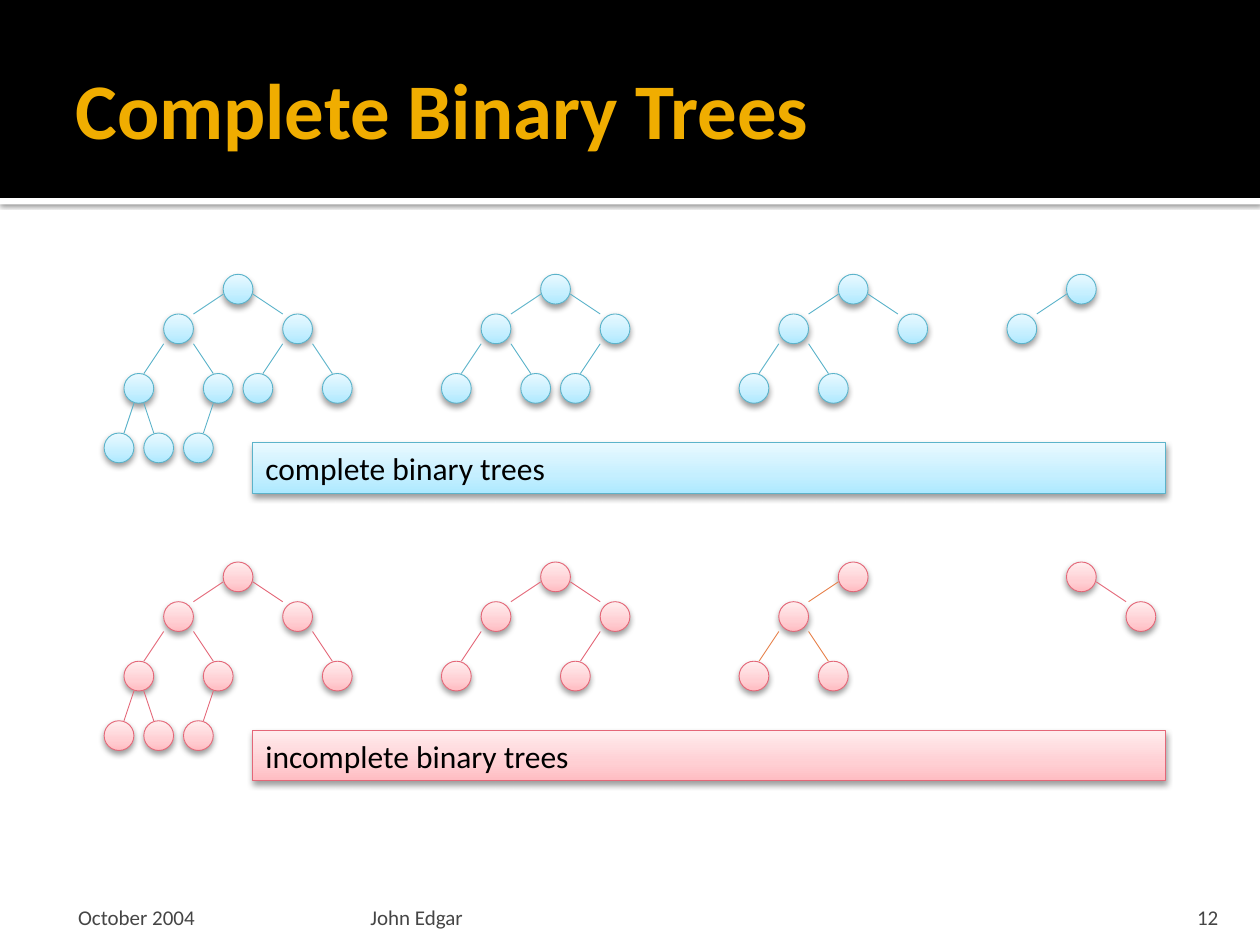
from pptx import Presentation, util as u
from pptx.dml.color import RGBColor
from pptx.enum import shapes, text
from pptx.oxml import parse_xml

NS = 'xmlns:a="http://schemas.openxmlformats.org/drawingml/2006/main"'
INK = {"black": "000000", "white": "FFFFFF", "gold": "F0AD00", "grey": "454545",
       "blue": "5BB3CA", "red": "E46778", "orange": "E7824C"}
FADE = {"blue": {0: "ADE9FF", 35: "C5EFFF", 100: "E9F9FF"},
        "red": {0: "FFBCC2", 35: "FFCFD3", 100: "FFEDEE"}}
TOPS = (0, 4, 10, 16)
REACH = (6, 4, 2)
EDGES = ((1.5, 2, 4.5), (1.5, 3, 3.5), (0.5, 3, 1.5))
SIZE = 3
ROOTS = (24, 56, 86, 109)
ROWS = (
    (27.65, "blue", "complete binary trees",
     (range(2, 11), range(2, 7), range(2, 6), (2,)), ("blue",) * 4),
    (56.65, "red", "incomplete binary trees",
     ((2, 3, 4, 5, 7, 8, 9, 10), (2, 3, 4, 6), (2, 4, 5), (3,)),
     ("red", "red", "orange", "red")),
)
FOOT = ((6.35, 29.6, "October 2004", 0.12, 0.05, "LEFT"),
        (36.7, 76.45, "John Edgar", 0.05, 0.05, "LEFT"),
        (113.9, 10.15, "12", 0.1, 0.1, "RIGHT"))


class Deck:
    """Draws styled elements on one slide, measured in a grid of 127 columns."""

    def __init__(self):
        self.prs = Presentation()
        self.prs.slide_width, self.prs.slide_height = u.Inches(10), u.Inches(7.5)
        self.page = self.prs.slides.add_slide(self.prs.slide_layouts[6])
        self.cell = self.prs.slide_width / 127
        self.font = "Calibri"

    def grid(self, *marks):
        return [round(mark * self.cell) for mark in marks]

    def color(self, name):
        return RGBColor.from_string(INK[name])

    def shadow(self, shape, alpha, blur, dist):
        shape.shadow.inherit = True
        shape._element.spPr.append(parse_xml(
            f'<a:effectLst {NS}><a:outerShdw blurRad="{u.Pt(blur)}" dist="{u.Pt(dist)}" '
            f'dir="5400000" rotWithShape="0"><a:srgbClr val="{INK["black"]}">'
            f'<a:alpha val="{alpha * 1000}"/></a:srgbClr></a:outerShdw></a:effectLst>'))

    def band(self, top, high, name):
        bar = self.page.shapes.add_shape(
            shapes.MSO_SHAPE.RECTANGLE, *self.grid(0, top, 127, high))
        bar.shadow.inherit = False
        bar.fill.solid()
        bar.fill.fore_color.rgb = self.color(name)
        bar.line.fill.background()
        return bar

    def glossy(self, home, kind, box, name):
        shape = home.add_shape(kind, *self.grid(*box))
        stops = "".join(f'<a:gs pos="{pos * 1000}"><a:srgbClr val="{tint}"/></a:gs>'
                        for pos, tint in FADE[name].items())
        shape._element.spPr.append(parse_xml(
            f'<a:gradFill {NS} rotWithShape="1"><a:gsLst>{stops}</a:gsLst>'
            '<a:lin ang="16200000" scaled="1"/></a:gradFill>'))
        shape.line.color.rgb = self.color(name)
        shape.line.width = u.Pt(0.5)
        self.shadow(shape, 38, 3.5, 2)
        return shape

    def edge(self, home, ends, name):
        line = home.add_connector(shapes.MSO_CONNECTOR.STRAIGHT, *self.grid(*ends))
        line.line.color.rgb = self.color(name)
        line.line.width = u.Pt(0.5)
        line._element.spPr.append(parse_xml(f"<a:effectLst {NS}/>"))

    def node(self, home, mid, top, name):
        self.glossy(home, shapes.MSO_SHAPE.OVAL, (mid - SIZE / 2, top, SIZE, SIZE), name)

    def tree(self, mid, top, kids, name, ink):
        home = self.page.shapes.add_group_shape().shapes
        mids = {1: mid}
        self.node(home, mid, top, name)
        for kid in kids:
            rank = kid.bit_length() - 2
            side = 1 if kid % 2 else -1
            base = mids[kid // 2]
            mids[kid] = base + side * REACH[rank]
            out, drop, far = EDGES[rank]
            low = top + TOPS[rank + 1]
            self.edge(home, (base + side * out, top + TOPS[rank] + drop,
                             base + side * far, low), ink)
            self.node(home, mids[kid], low, name)

    def say(self, frame, words, size, name, bold=False, align="LEFT"):
        frame.word_wrap = True
        para = frame.paragraphs[0]
        para.alignment = text.PP_ALIGN[align]
        run = para.add_run()
        run.text = words
        run.font.name, run.font.size, run.font.bold = self.font, u.Pt(size), bold
        run.font.color.rgb = self.color(name)

    def label(self, box, words, size, name, pads, anchor, **style):
        frame = self.page.shapes.add_textbox(*self.grid(*box)).text_frame
        (frame.margin_left, frame.margin_top,
         frame.margin_right, frame.margin_bottom) = map(u.Inches, pads)
        frame.vertical_anchor = text.MSO_ANCHOR[anchor]
        self.say(frame, words, size, name, **style)

    def caption(self, top, words, name):
        bar = self.glossy(self.page.shapes, shapes.MSO_SHAPE.RECTANGLE,
                          (25.5, top, 92, 5.1), name)
        self.say(bar.text_frame, words, 18, "black")


def main():
    deck = Deck()
    deck.shadow(deck.band(19.95, 0.65, "white"), 60, 2.5, 0.8)
    deck.band(0, 19.95, "black")
    deck.label((6.35, 2.15, 114.3, 17.4), "Complete Binary Trees", 45, "gold",
               (0.1, 0.05, 0.05, 0.05), "MIDDLE", bold=True)
    for left, wide, words, near, far, align in FOOT:
        deck.label((left, 89.9, wide, 3.8), words, 12, "grey",
                   (near, 0.05, far, 0), "BOTTOM", align=align)
    for top, name, words, trees, inks in ROWS:
        for mid, kids, ink in zip(ROOTS, trees, inks):
            deck.tree(mid, top, kids, name, ink)
        deck.caption(top + 16.95, words, name)
    deck.prs.save("out.pptx")


if __name__ == "__main__":
    main()
